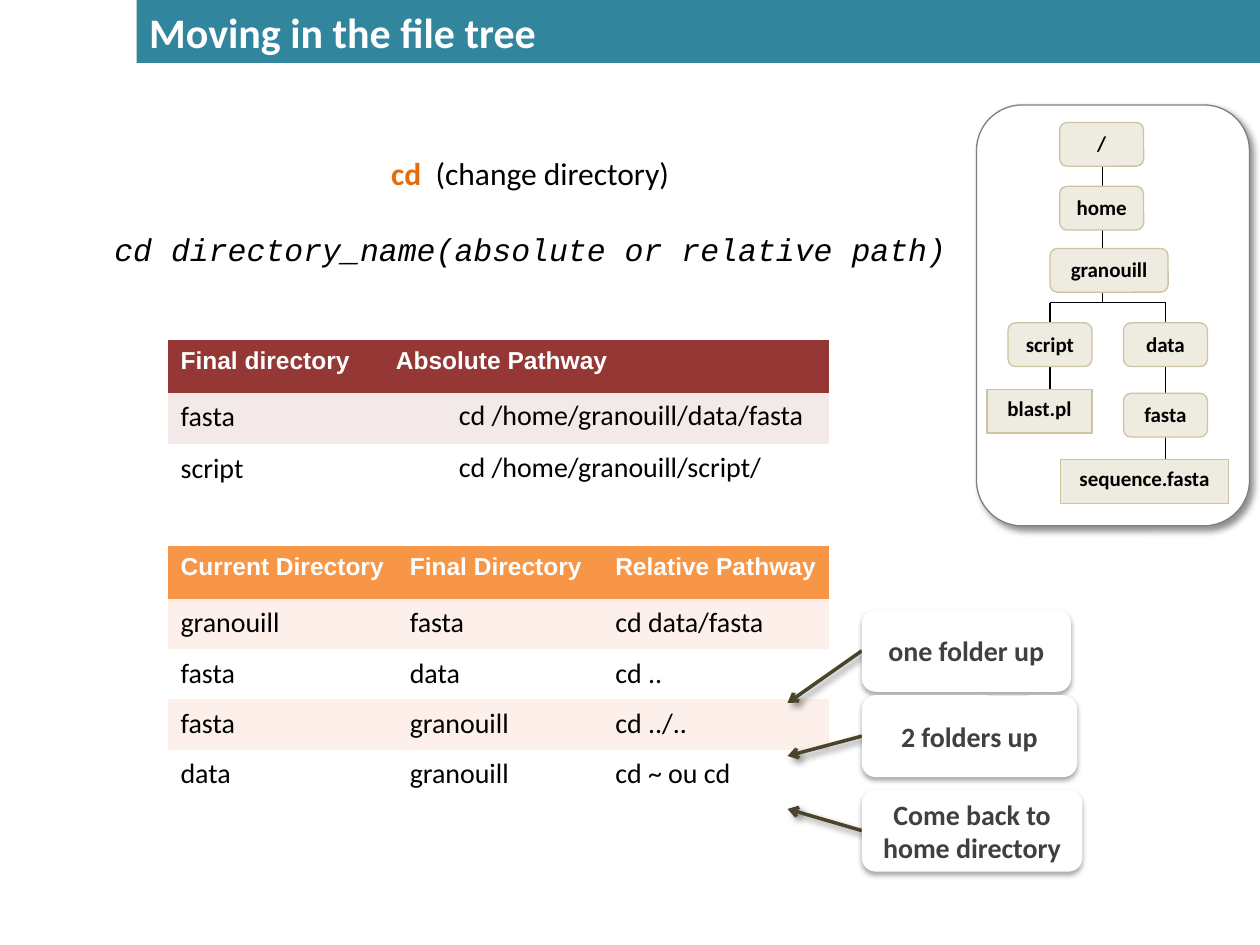
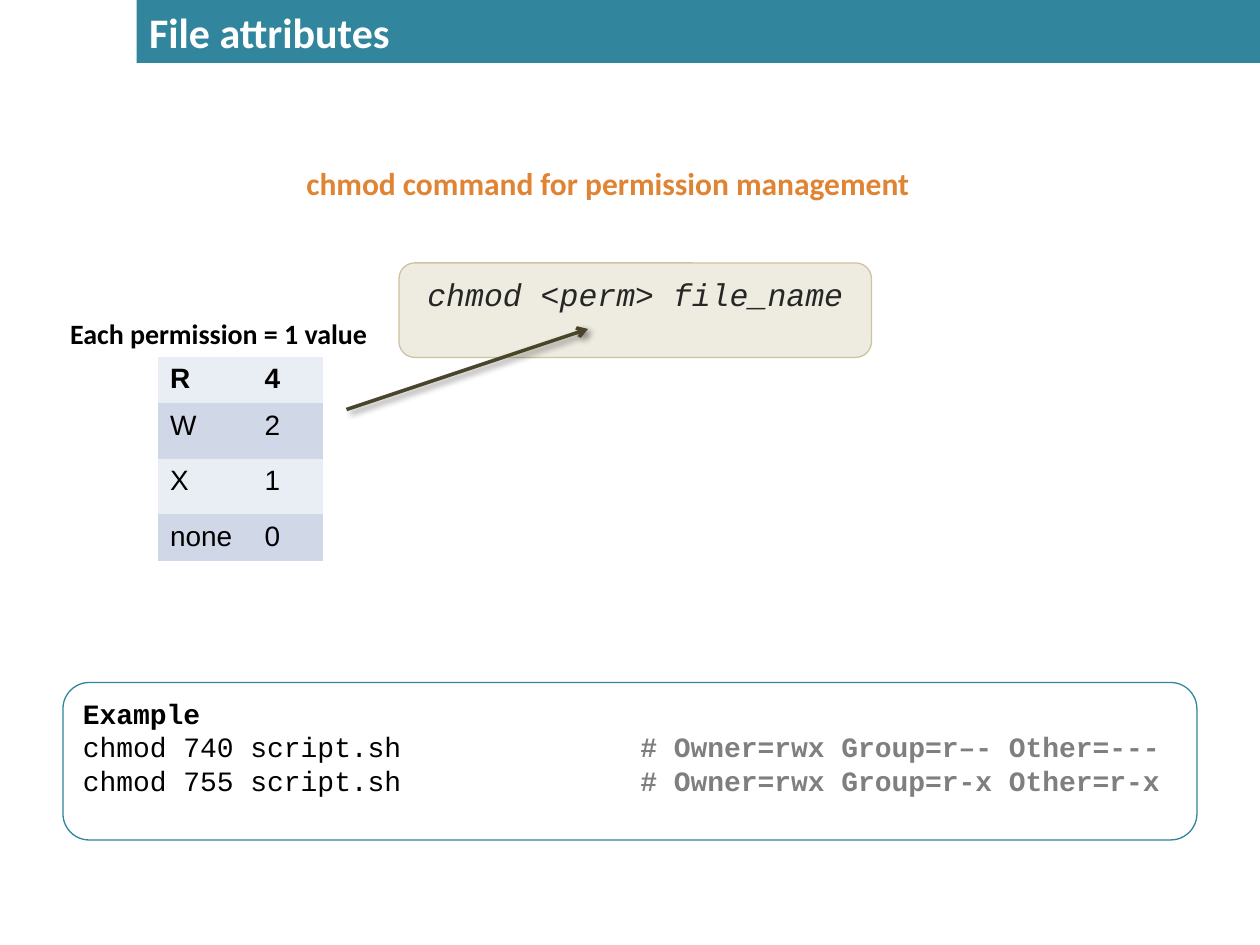
from dataclasses import dataclass

from lxml import etree
from pptx import Presentation
from pptx.dml.color import RGBColor
from pptx.enum.shapes import MSO_CONNECTOR, MSO_SHAPE
from pptx.enum.text import MSO_ANCHOR, MSO_AUTO_SIZE, PP_ALIGN
from pptx.oxml.ns import qn
from pptx.util import Pt

LINE = MSO_CONNECTOR.STRAIGHT
RECT, ROUND = MSO_SHAPE.RECTANGLE, MSO_SHAPE.ROUNDED_RECTANGLE
BUBBLE = MSO_SHAPE.ROUNDED_RECTANGULAR_CALLOUT
TOP, MIDDLE = MSO_ANCHOR.TOP, MSO_ANCHOR.MIDDLE
LEFT, CENTER, JUSTIFY = PP_ALIGN.LEFT, PP_ALIGN.CENTER, PP_ALIGN.JUSTIFY
NO_GRID = "{2D5ABB26-0587-4C30-8999-92F81FD0307C}"


@dataclass(frozen=True)
class Theme:
    # Colours
    teal: str = "31859C"
    white: str = "FFFFFF"
    black: str = "000000"
    orange: str = "E46C0A"
    amber: str = "E08434"
    sand: str = "EEECE1"
    edge: str = "CEC3A0"
    arrow: str = "4A452A"
    gray: str = "7F7F7F"
    dark: str = "404040"
    ink: str = "262626"
    red: str = "953735"
    rose: str = "F4E9E9"
    peach: str = "F79646"
    cream: str = "FDEFE9"
    pale: str = "E9EDF4"
    blue: str = "D0D8E8"
    # Fonts and type sizes
    sans: str = "Calibri"
    plain: str = "Arial"
    mono: str = "Courier New"
    title: int = 24
    lead: int = 18
    body: int = 16
    head: int = 14
    node: int = 12
    thin: float = 0.75


T = Theme()
# Shadows: opacity in percent, blur, distance, angle
CAST = (43, 4, 3, 45)
DROP = (35, 3.1, 1.8, 90)


# Formatting helpers
def put(item, **vals):
    for key, val in vals.items():
        setattr(item, key, val)


def face(size, color=T.black, name=T.sans, bold=False, italic=False):
    return dict(size=Pt(size), color=color, name=name, bold=bold, italic=italic)


def paint(fill, color):
    if color:
        fill.solid()
        fill.fore_color.rgb = RGBColor.from_string(color)
    else:
        fill.background()


def shade(shape, cast=None):
    """Replace the default shadow by the given one, or by none."""
    props = shape._element.spPr
    box = props.find(qn("a:effectLst"))
    if box is None:
        box = etree.SubElement(props, qn("a:effectLst"))
    if cast:
        alpha, blur, dist, angle = cast
        drop = etree.SubElement(
            box, qn("a:outerShdw"), blurRad=str(Pt(blur)), dist=str(Pt(dist)),
            dir=str(angle * 60000), rotWithShape="0")
        tone = etree.SubElement(drop, qn("a:srgbClr"), val=T.black)
        etree.SubElement(tone, qn("a:alpha"), val=str(alpha * 1000))


def write(frame, lines, look, **form):
    """Fill a frame; a line is a string or a list of (text, look) runs."""
    for i, line in enumerate(lines):
        para = frame.paragraphs[0] if i == 0 else frame.add_paragraph()
        put(para, **form)
        runs = [(line, look)] if isinstance(line, str) else line
        for text, style in runs:
            run = para.add_run()
            run.text = text
            vals = dict(style)
            run.font.color.rgb = RGBColor.from_string(vals.pop("color"))
            put(run.font, **vals)


# Elements
def page(deck, title):
    """Add a slide whose title is the band at the top."""
    slide = deck.slides.add_slide(deck.slide_layouts[5])
    band = slide.shapes.title
    put(band, left=Pt(78), top=Pt(0), width=Pt(642), height=Pt(36))
    paint(band.fill, T.teal)
    put(band.text_frame, auto_size=MSO_AUTO_SIZE.NONE, vertical_anchor=MIDDLE)
    write(band.text_frame, [title], face(T.title, T.white, bold=True), alignment=LEFT)
    return slide


def label(slide, area, lines, look, inset=3.6, **form):
    frame = slide.shapes.add_textbox(*map(Pt, area)).text_frame
    put(frame, word_wrap=True, margin_top=Pt(inset))
    write(frame, lines, look, **form)
    return frame


def block(slide, kind, area, fill=None, edge=None, cast=None, anchor=TOP, wrap=True):
    shape = slide.shapes.add_shape(kind, *map(Pt, area))
    shape.shadow.inherit = False
    paint(shape.fill, fill)
    paint(shape.line.fill, edge)
    if edge:
        shape.line.width = Pt(T.thin)
    shade(shape, cast)
    put(shape.text_frame, word_wrap=wrap, vertical_anchor=anchor)
    return shape


def link(slide, ends, color=T.black, width=T.thin, arrow=False):
    line = slide.shapes.add_connector(LINE, *map(Pt, ends))
    line.line.width = Pt(width)
    paint(line.line.fill, color)
    if arrow:
        etree.SubElement(line.line._get_or_add_ln(), qn("a:tailEnd"), type="arrow")
    shade(line, CAST if arrow else None)


def pointer(slide, ends):
    link(slide, ends, T.arrow, 0, True)


def grid(slide, spot, cols, rows, cells, fills, looks, indent=False):
    """Add a table; fills and looks hold one value per row."""
    area = (*spot, sum(cols), sum(rows))
    table = slide.shapes.add_table(len(rows), len(cols), *map(Pt, area)).table
    table._tbl.tblPr.find(qn("a:tableStyleId")).text = NO_GRID
    for col, width in zip(table.columns, cols):
        col.width = Pt(width)
    for r, (row, height) in enumerate(zip(table.rows, rows)):
        row.height = Pt(height)
        for c, text in enumerate(cells[r]):
            cell = row.cells[c]
            paint(cell.fill, fills[r])
            put(cell, margin_top=Pt(5), margin_bottom=Pt(3.6))
            shift = indent and r > 0 and c > 0
            write(cell.text_frame, [text], looks[r], line_spacing=0.93,
                  alignment=JUSTIFY if shift else LEFT)
            if shift:
                cell.margin_top = Pt(4.3)
                cell.text_frame.paragraphs[0]._p.get_or_add_pPr().set("marL", str(Pt(36)))


def tree(slide):
    """Draw the file tree: links first, then folders and files."""
    trunk, left, right, fork = 630, 600, 666, 173
    for ends in ((trunk, 88.5, trunk, fork), (left, fork, right, fork),
                 (left, fork, left, 231), (right, fork, right, 268.5)):
        link(slide, ends)
    nodes = (
        ("/", ROUND, 605.5, 70, 48),
        ("home", ROUND, 605.5, 106.5, 48),
        ("granouill", ROUND, 600, 142, 67.5),
        ("script", ROUND, 576, 184.5, 48),
        ("data", ROUND, 642, 184.5, 48),
        ("blast.pl", RECT, 564, 222.5, 60),
        ("fasta", ROUND, 642, 224.75, 48),
        ("sequence.fasta", RECT, 606, 262.75, 96),
    )
    for name, kind, x, y, width in nodes:
        node = block(slide, kind, (x, y, width, 25), T.sand, T.edge, wrap=False)
        write(node.text_frame, [name], face(T.node, bold=True), alignment=CENTER)


def callout(slide, lines, y, width, tip):
    """Add a note and the arrow from its left edge to the table."""
    x, height = 492.5, 46.8
    pointer(slide, (x, y + height / 2, 450, tip))
    note = block(slide, BUBBLE, (x, y, width, height), T.white, cast=DROP, anchor=MIDDLE)
    for i, val in enumerate((0.065, -0.496, 0.167)):
        note.adjustments[i] = val
    write(note.text_frame, lines, face(T.body, T.dark, bold=True), alignment=CENTER)


# Slides
def moving(deck):
    slide = page(deck, "Moving in the file tree")
    block(slide, ROUND, (558, 60, 156, 240.5), T.white, T.gray, CAST)

    # Command and its syntax
    lead = face(T.lead)
    usage = face(T.lead, name=T.mono, italic=True)
    lines = [[("cd ", face(T.lead, T.orange, bold=True)), (" (change directory)", lead)],
             [("cd directory_name(absolute or relative path)", usage)]]
    frame = label(slide, (36, 62.5, 534, 225), lines, lead, 25.6, alignment=CENTER)
    frame.paragraphs[1].space_before = Pt(22)

    # Relative and absolute paths
    head, body = face(T.head, T.white, T.plain, True), face(T.body)
    grid(slide, (96, 312), (131, 117.4, 129.6), (30, *[28.8] * 4),
         [("Current Directory", "Final Directory", "Relative Pathway"),
          ("granouill", "fasta", "cd data/fasta"),
          ("fasta", "data", "cd .."),
          ("fasta", "granouill", "cd ../.."),
          ("data", "granouill", "cd ~ ou cd")],
         [T.peach, *[T.cream, T.white] * 2], [head, *[body] * 4])
    grid(slide, (96, 194.4), (123, 255), (30, 29.4, 46.5),
         [("Final directory", "Absolute Pathway"),
          ("fasta", "cd /home/granouill/data/fasta"),
          ("script", "cd /home/granouill/script/")],
         [T.red, T.rose, T.white], [head, body, body], indent=True)

    # Notes on the relative paths
    callout(slide, ["one folder up"], 348.5, 119.5, 401.75)
    callout(slide, ["2 folders up"], 397.25, 123, 432)
    callout(slide, ["Come back to", "home directory"], 451.25, 126, 462.25)
    tree(slide)


def rights(deck):
    slide = page(deck, "File attributes")
    label(slide, (168, 90, 386, 29), ["chmod command for permission management"],
          face(T.lead, T.amber, bold=True))

    # Syntax
    box = block(slide, ROUND, (228, 150.25, 270, 54), T.sand, T.edge)
    write(box.text_frame, ["chmod <perm> file_name"],
          face(T.lead, T.ink, T.mono, italic=True), alignment=CENTER, line_spacing=1.04)
    pointer(slide, (198, 234, 336, 188))

    # Permission values
    label(slide, (33, 176.5, 195, 27), ["Each permission = 1 value"],
          face(T.body, bold=True), alignment=JUSTIFY, line_spacing=1.04)
    body = face(T.body, name=T.plain)
    grid(slide, (90, 204), (54, 40.5), (26.5, 31.75, 31.75, 26.5),
         [("R", "4"), ("W", "2"), ("X", "1"), ("none", "0")],
         [T.pale, T.blue] * 2, [face(T.body, name=T.plain, bold=True), *[body] * 3])

    # Example
    code = face(T.body, name=T.mono)
    hint = face(T.body, T.gray, T.mono, True)
    box = block(slide, ROUND, (36, 390, 648, 90), edge=T.teal)
    rows = [("chmod 740 script.sh\t", "# Owner=rwx Group=r–- Other=---"),
            ("chmod 755 script.sh\t", "# Owner=rwx Group=r-x Other=r-x")]
    write(box.text_frame,
          [[("Example", face(T.body, name=T.mono, bold=True))]]
          + [[(order, code), (note, hint)] for order, note in rows],
          code, alignment=LEFT)
    for para in box.text_frame.paragraphs[1:]:
        tabs = etree.SubElement(para._p.get_or_add_pPr(), qn("a:tabLst"))
        etree.SubElement(tabs, qn("a:tab"), pos=str(Pt(318.5)), algn="l")


def main():
    deck = Presentation()
    put(deck, slide_width=Pt(720), slide_height=Pt(540))
    moving(deck)
    rights(deck)
    deck.save("out.pptx")


if __name__ == "__main__":
    main()
